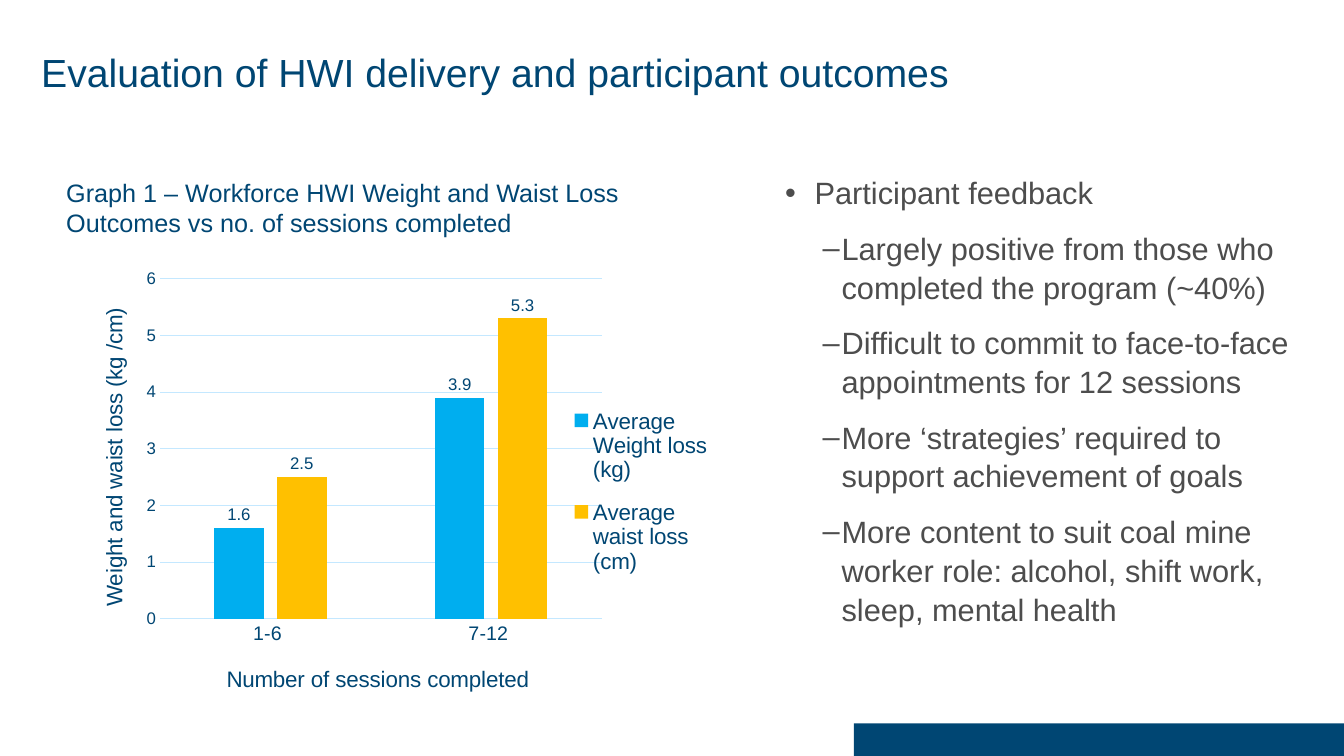
from lxml import etree
from pptx import Presentation
from pptx.chart.data import CategoryChartData as ChartData
from pptx.dml.color import RGBColor
from pptx.enum.chart import XL_CHART_TYPE as ChartType
from pptx.enum.chart import XL_LABEL_POSITION as LabelPos
from pptx.enum.chart import XL_LEGEND_POSITION as LegendPos
from pptx.enum.chart import XL_TICK_MARK as TickMark
from pptx.enum.shapes import MSO_SHAPE as Preset
from pptx.oxml.ns import qn
from pptx.util import Cm, Pt

NAVY, GREY, PALE = "004673", "4D4D4D", "C4E8FF"

OUTCOMES = [
    ("Average Weight loss (kg)", (1.6, 3.9), "00AEEF"),
    ("Average waist loss (cm)", (2.5, 5.3), "FFC000"),
]
FEEDBACK = [
    "Largely positive from those who completed the program (~40%)",
    "Difficult to commit to face-to-face appointments for 12 sessions",
    "More ‘strategies’ required to support achievement of goals",
    "More content to suit coal mine worker role: alcohol, shift work, "
    "sleep, mental health",
]


def rgb(code):
    return RGBColor.from_string(code)


def set_values(target, values):
    for name, value in values.items():
        setattr(target, name, value)


def set_font(font, size, color=NAVY):
    set_values(font, {"name": "Arial", "size": Pt(size), "bold": False})
    font.color.rgb = rgb(color)


def set_line(line, color=PALE):
    line.color.rgb = rgb(color)
    line.width = Pt(0.75)


def add_text(slide, box, inset=True):
    frame = slide.shapes.add_textbox(*map(Cm, box)).text_frame
    frame.word_wrap = True
    if not inset:
        sides = ("left", "right", "top", "bottom")
        set_values(frame, {f"margin_{side}": 0 for side in sides})
    return frame


def write(paragraph, text, size, color=NAVY):
    paragraph.text = text
    set_font(paragraph.runs[0].font, size, color)


def add_bullet(paragraph, mark, left, hang):
    props = paragraph._p.get_or_add_pPr()
    props.set("marL", str(Cm(left)))
    props.set("indent", str(-Cm(hang)))
    etree.SubElement(props, qn("a:buFont")).set("typeface", "Arial")
    etree.SubElement(props, qn("a:buChar")).set("char", mark)


def place(part, index, inner=False, **fractions):
    """Give a chart part a fixed place, in fractions of the chart."""
    for old in part.findall(qn("c:layout")):
        part.remove(old)
    layout = part.makeelement(qn("c:layout"), {})
    part.insert(index, layout)
    manual = etree.SubElement(layout, qn("c:manualLayout"))
    values = {"layoutTarget": "inner"} if inner else {}
    values.update(xMode="edge", yMode="edge", **fractions)
    for name, value in values.items():
        etree.SubElement(manual, qn(f"c:{name}")).set("val", str(value))


def format_axis(axis, title, size):
    set_values(axis, {"major_tick_mark": TickMark.NONE,
                      "minor_tick_mark": TickMark.NONE})
    set_font(axis.tick_labels.font, size)
    write(axis.axis_title.text_frame.paragraphs[0], title, 16)


def add_outcome_chart(slide):
    data = ChartData(number_format="General")
    data.categories = ["1-6 ", "7-12 "]
    for name, losses, _ in OUTCOMES:
        data.add_series(name, losses)
    box = map(Cm, (1.42, 5.61, 16.74, 12.42))
    chart = slide.shapes.add_chart(ChartType.COLUMN_CLUSTERED, *box, data).chart
    chart.has_title = False
    set_font(chart.font, 10)

    # Columns and their labels
    plot = chart.plots[0]
    set_values(plot, {"gap_width": 219, "overlap": -27,
                      "vary_by_categories": False})
    for series, (_, _, color) in zip(plot.series, OUTCOMES):
        series.format.fill.solid()
        series.format.fill.fore_color.rgb = rgb(color)
        labels = series.data_labels
        set_values(labels, {"show_value": True,
                            "position": LabelPos.OUTSIDE_END})
        set_font(labels.font, 12)

    # Axes
    sessions, loss = chart.category_axis, chart.value_axis
    format_axis(sessions, "Number of sessions completed", 14)
    set_line(sessions.format.line)
    format_axis(loss, "Weight and waist loss (kg /cm)", 12)
    set_values(loss, {"minimum_scale": 0, "maximum_scale": 6, "major_unit": 1})
    loss.format.line.fill.background()
    set_line(loss.major_gridlines.format.line)
    turn = loss.axis_title.text_frame._txBody.find(qn("a:bodyPr"))
    turn.set("rot", "-5400000")
    turn.set("vert", "horz")

    # Legend
    chart.has_legend = True
    set_values(chart.legend, {"position": LegendPos.RIGHT,
                              "include_in_layout": False})
    set_font(chart.legend.font, 16)

    # Fixed places
    plot_area = chart._chartSpace.chart.plotArea
    place(plot_area, 0, inner=True, x=0.156, y=0.114, w=0.665, h=0.69)
    place(sessions.axis_title._element, 1, x=0.25, y=0.89)
    place(chart.legend._element, 1, x=0.77, y=0.34, w=0.22, h=0.41)


def add_feedback(slide):
    frame = add_text(slide, (19.79, 4.34, 13.64, 12.42), inset=False)
    heading = frame.paragraphs[0]
    add_bullet(heading, "•", 0.74, 0.74)
    write(heading, "Participant feedback", 22, GREY)
    for remark in FEEDBACK:
        point = frame.add_paragraph()
        point.level = 1
        add_bullet(point, "–", 1.42, 0.48)
        write(point, remark, 22, GREY)
        point.space_before = Pt(6)
    for paragraph in frame.paragraphs:
        set_values(paragraph, {"space_after": Pt(6), "line_spacing": 1.05})


def add_footer_bar(slide):
    box = map(Cm, (21.52, 18.23, 12.35, 0.82))
    bar = slide.shapes.add_shape(Preset.RECTANGLE, *box)
    bar.shadow.inherit = False
    bar.fill.solid()
    bar.fill.fore_color.rgb = rgb(NAVY)
    bar.line.fill.background()


def main():
    deck = Presentation()
    set_values(deck, {"slide_width": Cm(33.87), "slide_height": Cm(19.05)})
    slide = deck.slides.add_slide(deck.slide_layouts[6])

    add_footer_bar(slide)

    # Title
    title = add_text(slide, (1.04, 1.35, 27.89, 2.64), inset=False).paragraphs[0]
    write(title, "Evaluation of HWI delivery and participant outcomes", 28)
    title.line_spacing = 0.9

    add_feedback(slide)
    add_outcome_chart(slide)

    # Chart caption
    caption = add_text(slide, (1.42, 4.34, 15.49, 1.8)).paragraphs[0]
    write(caption, "Graph 1 – Workforce HWI Weight and Waist Loss "
                   "Outcomes vs no. of sessions completed", 18)

    deck.save("out.pptx")


if __name__ == "__main__":
    main()
